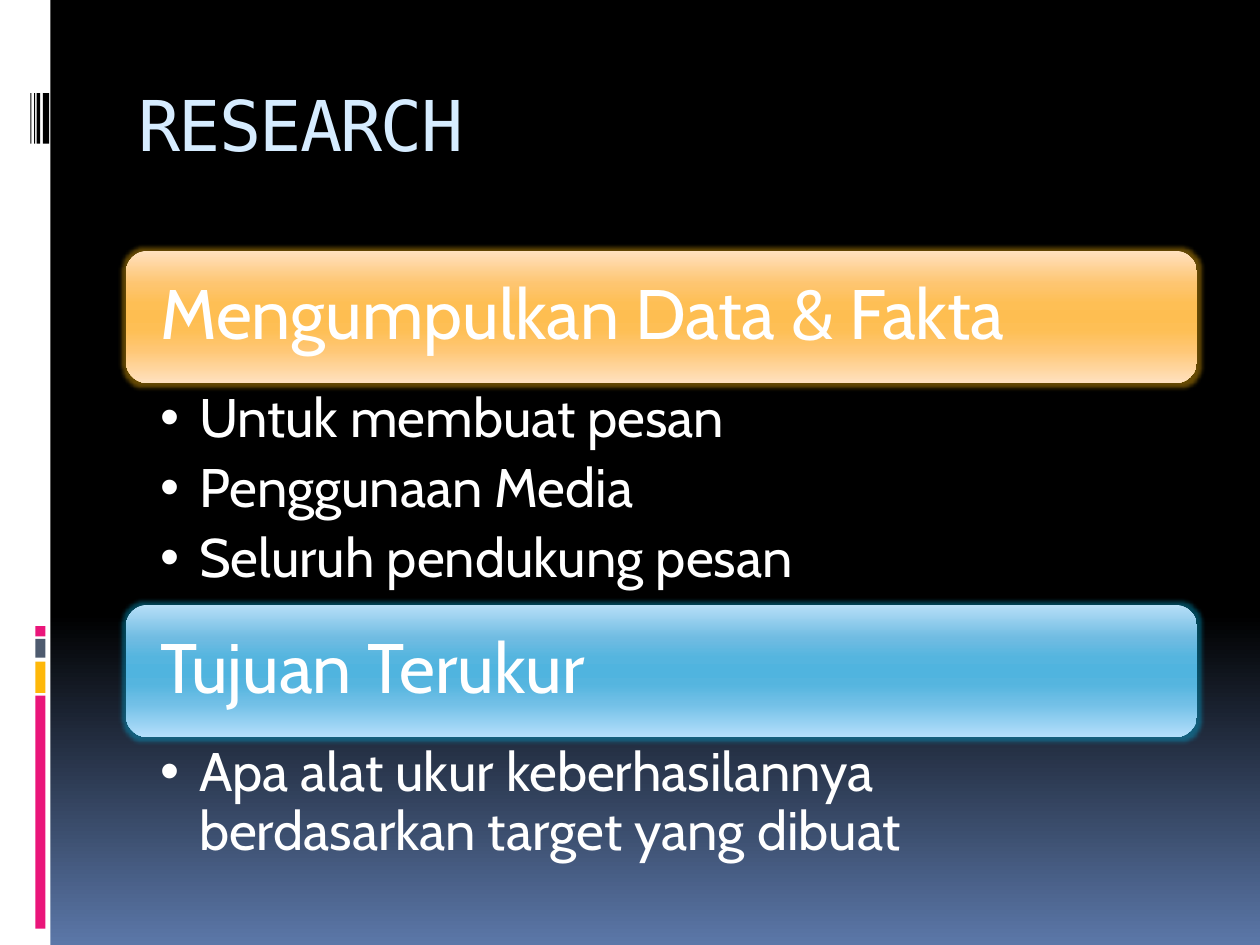
"""Build the RESEARCH slide: two gradient headings, each followed by a bulleted list."""
from dataclasses import dataclass

from pptx import Presentation
from pptx import util as u
from pptx.dml.color import RGBColor
from pptx.enum import shapes, text
from pptx.oxml import ns
from pptx.oxml.xmlchemy import OxmlElement


@dataclass(frozen=True)
class Theme:
    title_font: str = "DejaVu Sans Mono"
    body_font: str = "Cabin"
    title_size: int = 40
    heading_size: int = 40
    list_size: int = 31
    title: str = "D6ECFF"
    white: str = "FFFFFF"
    black: str = "000000"
    pink: str = "EA157A"
    amber: str = "FEB80A"
    slate: str = "4E5B6F"
    sky: str = "00ADDC"


THEME = Theme()
TITLE = "RESEARCH"
BACKGROUND = [(0, THEME.black), (65, THEME.black), (100, "5B77A8")]
POSITIONS = (0, 25, 40, 50, 60, 75, 100)
SECTIONS = [
    {
        "heading": "Mengumpulkan Data & Fakta",
        "items": ["Untuk membuat pesan", "Penggunaan Media", "Seluruh pendukung pesan"],
        "colors": ("FFE1BF", "FEC570", "FEBF55", "FEBE51", "FEBF55", "FFC775", "FFE1BF"),
        "glow": THEME.amber,
        "list_height": 1.76,
    },
    {
        "heading": "Tujuan Terukur",
        "items": ["Apa alat ukur keberhasilannya berdasarkan target yang dibuat"],
        "colors": ("B7DFF8", "70BCE2", "55B5DF", "50B4DF", "55B5DF", "72C0E7", "B4DFFB"),
        "glow": THEME.sky,
        "list_height": 1.06,
    },
]
MARGIN, CONTENT_WIDTH = 1, 8.5
SECTION_TOP, HEADING_HEIGHT = 1.99, 1.05
SIDEBAR = (0, 0, 0.4, 7.5)
BLOCK_LEFT, BLOCK_WIDTH = 0.28, 0.08
BLOCKS = [(4.97, 0.08, THEME.pink), (5.07, 0.15, THEME.slate),
          (5.25, 0.25, THEME.amber), (5.52, 1.85, THEME.pink)]
STRIPE_TOP, STRIPE_HEIGHT = 0.74, 0.4
STRIPES = [(0.24, 0.01), (0.27, 0.01), (0.29, 0.03), (0.34, 0.05)]


def place(shape, left, top, width, height):
    shape.left, shape.top = u.Inches(left), u.Inches(top)
    shape.width, shape.height = u.Inches(width), u.Inches(height)


def add_block(slide, box, color):
    shape = slide.shapes.add_shape(shapes.MSO_SHAPE.RECTANGLE, *map(u.Inches, box))
    shape.shadow.inherit = False
    shape.fill.solid()
    shape.fill.fore_color.rgb = RGBColor.from_string(color)
    shape.line.fill.background()


def set_gradient(fill, element, stops):
    fill.gradient()
    fill.gradient_angle = 270
    stop_list = element.find(".//" + ns.qn("a:gsLst"))
    for stop in list(stop_list):
        stop_list.remove(stop)
    for position, color in stops:
        stop = OxmlElement("a:gs")
        stop.set("pos", str(position * 1000))
        add_color(stop, color)
        stop_list.append(stop)


def add_color(parent, value, alpha=None):
    color = OxmlElement("a:srgbClr")
    color.set("val", value)
    if alpha:
        opacity = OxmlElement("a:alpha")
        opacity.set("val", str(alpha * 1000))
        color.append(opacity)
    parent.append(color)


def add_glow(shape, color):
    glow = OxmlElement("a:glow")
    glow.set("rad", str(u.Pt(5)))
    add_color(glow, color, 40)
    shape.element.spPr.find(ns.qn("a:effectLst")).append(glow)


def set_text(shape, lines, font, size, color, insets, anchor, spacing=1.0, after=0):
    frame = shape.text_frame
    frame.text = "\n".join(lines)
    frame.word_wrap = True
    frame.auto_size = text.MSO_AUTO_SIZE.NONE
    frame.vertical_anchor = anchor
    frame.margin_left, frame.margin_top, frame.margin_right, frame.margin_bottom = map(u.Inches, insets)
    for paragraph in frame.paragraphs:
        paragraph.alignment = text.PP_ALIGN.LEFT
        paragraph.line_spacing = spacing
        paragraph.space_before, paragraph.space_after = u.Pt(0), u.Pt(after)
        for run in paragraph.runs:
            run.font.name, run.font.size = font, u.Pt(size)
            run.font.color.rgb = RGBColor.from_string(color)


def add_title(slide):
    title = slide.shapes.title
    place(title, MARGIN, 0.56, CONTENT_WIDTH, 1)
    set_text(title, [TITLE], THEME.title_font, THEME.title_size, THEME.title,
             (0.1, 0.09, 0.1, 0.05), text.MSO_ANCHOR.TOP)
    title.text_frame.paragraphs[0].runs[0].font._element.set("spc", "-100")


def add_heading(slide, section, top):
    box = (MARGIN, top, CONTENT_WIDTH, HEADING_HEIGHT)
    heading = slide.shapes.add_shape(shapes.MSO_SHAPE.ROUNDED_RECTANGLE, *map(u.Inches, box))
    heading.shadow.inherit = False
    heading.line.fill.background()
    set_gradient(heading.fill, heading.element.spPr, zip(POSITIONS, section["colors"]))
    add_glow(heading, section["glow"])
    set_text(heading, [section["heading"]], THEME.body_font, THEME.heading_size, THEME.white,
             (0.22,) * 4, text.MSO_ANCHOR.MIDDLE, 0.9)


def fill_list(body, section, top):
    place(body, MARGIN, top, CONTENT_WIDTH, section["list_height"])
    set_text(body, section["items"], THEME.body_font, THEME.list_size, THEME.white,
             (0.27, 0.06, 0.31, 0.06), text.MSO_ANCHOR.TOP, 0.9, 6.5)
    for paragraph in body.text_frame.paragraphs:
        properties = paragraph._p.get_or_add_pPr()
        properties.set("marL", str(u.Inches(0.31)))
        properties.set("indent", str(u.Inches(-0.31)))


def main():
    presentation = Presentation()
    presentation.slide_width, presentation.slide_height = u.Inches(10), u.Inches(7.5)
    slide = presentation.slides.add_slide(presentation.slide_layouts.get_by_name("Two Content"))
    set_gradient(slide.background.fill, slide.element, BACKGROUND)
    add_block(slide, SIDEBAR, THEME.white)
    for top, height, color in BLOCKS:
        add_block(slide, (BLOCK_LEFT, top, BLOCK_WIDTH, height), color)
    for left, width in STRIPES:
        add_block(slide, (left, STRIPE_TOP, width, STRIPE_HEIGHT), THEME.black)
    add_title(slide)
    top = SECTION_TOP
    for section, index in zip(SECTIONS, (1, 2)):
        add_heading(slide, section, top)
        top += HEADING_HEIGHT
        fill_list(slide.placeholders[index], section, top)
        top += section["list_height"]
    presentation.save("out.pptx")


if __name__ == "__main__":
    main()
